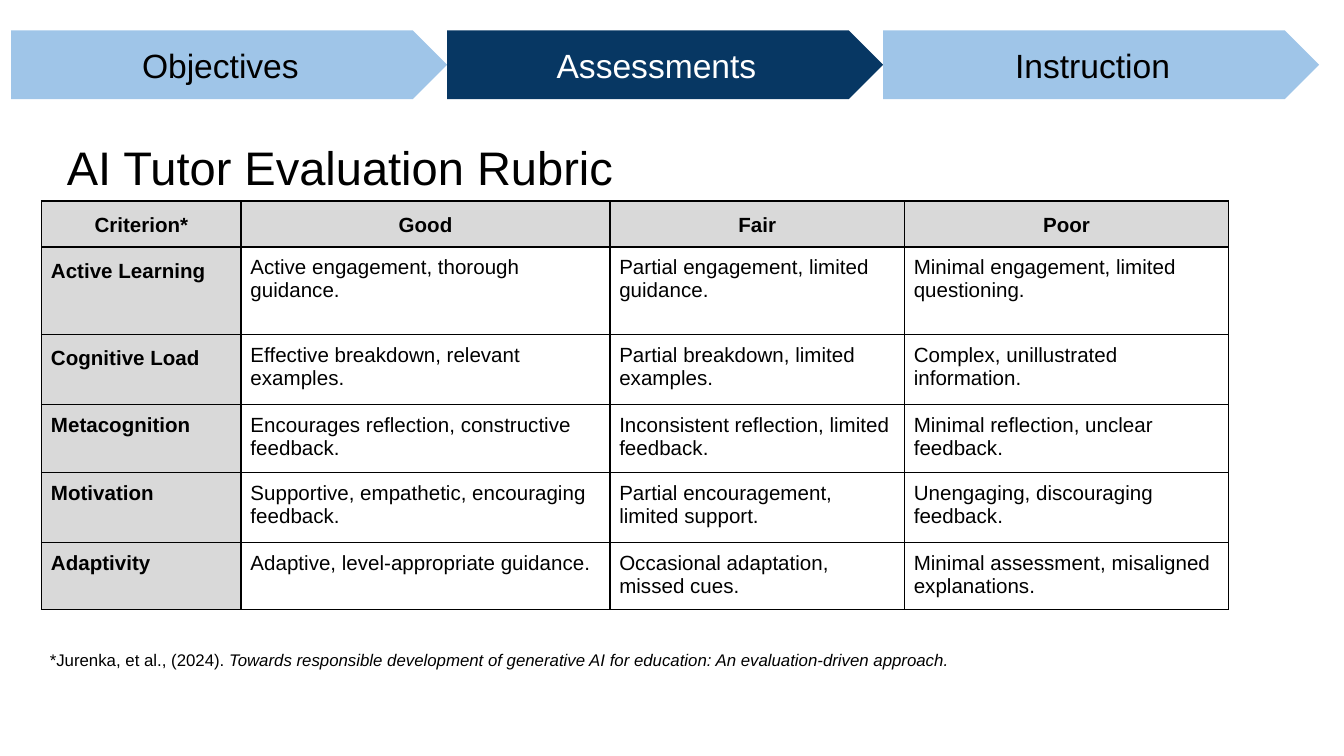
from dataclasses import dataclass

import pptx
import pptx.dml.color
import pptx.enum.shapes
import pptx.enum.text
import pptx.oxml
import pptx.oxml.ns
import pptx.util

Pt = pptx.util.Pt
RGBColor = pptx.dml.color.RGBColor
Align = pptx.enum.text.PP_ALIGN
Anchor = pptx.enum.text.MSO_ANCHOR

BLACK = RGBColor(0x00, 0x00, 0x00)
WHITE = RGBColor(0xFF, 0xFF, 0xFF)
GREY = RGBColor(0xD9, 0xD9, 0xD9)
SKY = RGBColor(0x9F, 0xC5, 0xE8)
NAVY = RGBColor(0x07, 0x37, 0x63)
FONT = "Arial"


@dataclass
class Step:
    label: str
    fill: RGBColor = SKY
    color: RGBColor = BLACK


@dataclass
class Row:
    height: float
    texts: tuple[str, str, str, str]
    lead: float = 1.0


STEPS = [Step("Objectives"), Step("Assessments", NAVY, WHITE), Step("Instruction")]
STEP_LEFT, STEP_TOP, STEP_WIDTH, STEP_HEIGHT = 5.9, 16.3, 233.6, 36.8

WIDTHS = [106.9, 197.6, 157.8, 173.6]
ROWS = [
    Row(24.6, ("Criterion*", "Good", "Fair", "Poor"), 1.15),
    Row(46.9, ("Active Learning", "Active engagement, thorough guidance.",
               "Partial engagement, limited guidance.",
               "Minimal engagement, limited questioning."), 1.15),
    Row(37.5, ("Cognitive Load", "Effective breakdown, relevant examples.",
               "Partial breakdown, limited examples.",
               "Complex, unillustrated information."), 1.15),
    Row(36.5, ("Metacognition", "Encourages reflection, constructive feedback.",
               "Inconsistent reflection, limited feedback.",
               "Minimal reflection, unclear feedback.")),
    Row(37.5, ("Motivation", "Supportive, empathetic, encouraging feedback.",
               "Partial encouragement, limited support.",
               "Unengaging, discouraging feedback.")),
    Row(36, ("Adaptivity", "Adaptive, level-appropriate guidance.",
             "Occasional adaptation, missed cues.",
             "Minimal assessment, misaligned explanations.")),
]


def write(para, text: str, *, size: float, color: RGBColor = BLACK,
          bold: bool = False, italic: bool = False,
          align=Align.LEFT, lead: float = 1.0) -> None:
    para.alignment = align
    para.line_spacing = lead
    run = para.add_run()
    run.text = text
    font = run.font
    font.name = FONT
    font.size = Pt(size)
    font.bold = bold
    font.italic = italic
    font.color.rgb = color


def set_frame(frame, anchor, left: float = 7.2) -> None:
    frame.word_wrap = True
    frame.auto_size = pptx.enum.text.MSO_AUTO_SIZE.NONE
    frame.vertical_anchor = anchor
    frame.margin_left = Pt(left)
    frame.margin_right = frame.margin_top = frame.margin_bottom = Pt(7.2)


def draw_title(slide) -> None:
    title = slide.shapes.title
    title.left, title.top = Pt(22.3), Pt(64.1)
    title.width, title.height = Pt(680.4), Pt(50.4)
    set_frame(title.text_frame, Anchor.MIDDLE, left=13.5)
    write(title.text_frame.paragraphs[0], "AI Tutor Evaluation Rubric", size=25.2)


def draw_step(slide, step: Step, left: float) -> None:
    shape = slide.shapes.add_shape(
        pptx.enum.shapes.MSO_SHAPE.PENTAGON,
        Pt(left), Pt(STEP_TOP), Pt(STEP_WIDTH), Pt(STEP_HEIGHT))
    shape.adjustments[0] = 0.5
    shape.shadow.inherit = False
    shape.fill.solid()
    shape.fill.fore_color.rgb = step.fill
    shape.line.fill.background()
    set_frame(shape.text_frame, Anchor.MIDDLE)
    write(shape.text_frame.paragraphs[0], step.label, size=18,
          color=step.color, align=Align.CENTER)


def add_edges(cell) -> None:
    props = cell._tc.get_or_add_tcPr()
    for spot, side in enumerate(("lnL", "lnR", "lnT", "lnB")):
        props.insert(spot, pptx.oxml.parse_xml(
            f'<a:{side} {pptx.oxml.ns.nsdecls("a")} w="{Pt(1)}"><a:solidFill>'
            f'<a:srgbClr val="{BLACK}"/></a:solidFill></a:{side}>'))


def draw_cell(cell, text: str, row: Row, head: bool, side: bool) -> None:
    cell.margin_left = cell.margin_right = Pt(5)
    cell.margin_top = cell.margin_bottom = Pt(5)
    cell.vertical_anchor = Anchor.TOP
    if head or side:
        cell.fill.solid()
        cell.fill.fore_color.rgb = GREY
    else:
        cell.fill.background()
    write(cell.text_frame.paragraphs[0], text, size=11, bold=head or side,
          align=Align.CENTER if head else Align.LEFT,
          lead=row.lead if head or side else 1.0)
    add_edges(cell)


def draw_table(slide) -> None:
    height = sum(row.height for row in ROWS)
    table = slide.shapes.add_table(
        len(ROWS), len(WIDTHS), Pt(22.3), Pt(107.7),
        Pt(sum(WIDTHS)), Pt(height)).table
    table.horz_banding = False
    for col, width in zip(table.columns, WIDTHS):
        col.width = Pt(width)
    for i, row in enumerate(ROWS):
        table.rows[i].height = Pt(row.height)
        for j, text in enumerate(row.texts):
            draw_cell(table.cell(i, j), text, row, i == 0, j == 0)


def draw_note(slide) -> None:
    box = slide.shapes.add_textbox(Pt(19.6), Pt(340.7), Pt(680.4), Pt(23))
    set_frame(box.text_frame, Anchor.TOP)
    para = box.text_frame.paragraphs[0]
    write(para, "*Jurenka, et al., (2024). ", size=9)
    write(para, "Towards responsible development of generative AI for education: "
          "An evaluation-driven approach.", size=9, italic=True)


def main() -> None:
    deck = pptx.Presentation()
    deck.slide_width, deck.slide_height = Pt(720), Pt(405)
    slide = deck.slides.add_slide(deck.slide_layouts.get_by_name("Title Only"))
    draw_title(slide)
    for i, step in enumerate(STEPS):
        draw_step(slide, step, STEP_LEFT + i * STEP_WIDTH)
    draw_table(slide)
    draw_note(slide)
    deck.save("out.pptx")


if __name__ == "__main__":
    main()
